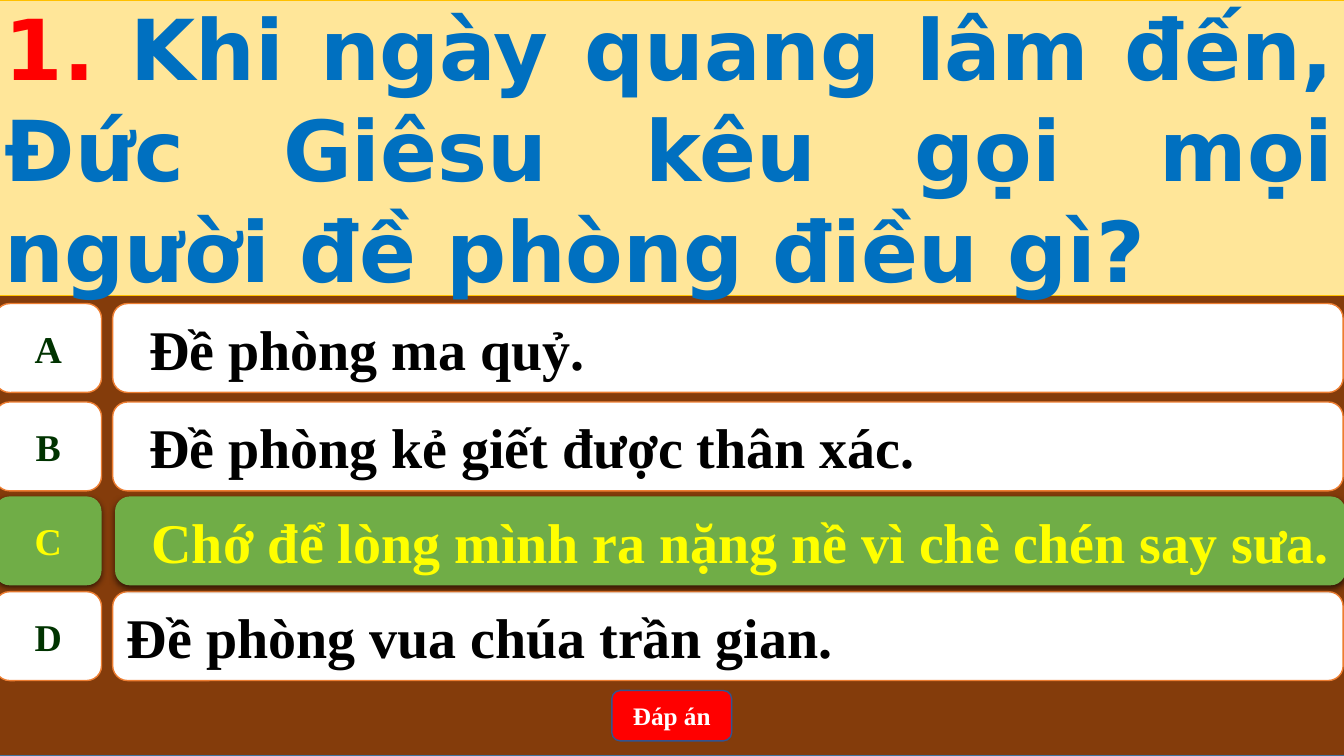
"""Builds a quiz slide with a question, four answers and an answer button."""
from dataclasses import dataclass
from typing import Optional

from lxml import etree
from pptx import Presentation
from pptx import util as u
from pptx.dml.color import RGBColor
from pptx.enum import shapes, text
from pptx.oxml import ns

BROWN = RGBColor(0x84, 0x3C, 0x0B)
STEEL = RGBColor(0x43, 0x73, 0x9E)
NAVY = RGBColor(0x32, 0x54, 0x91)
CREAM = RGBColor(0xFF, 0xE6, 0x99)
GOLD = RGBColor(0xFF, 0xC0, 0x00)
ORANGE = RGBColor(0xED, 0x7D, 0x31)
GREEN = RGBColor(0x70, 0xAD, 0x47)
DARK_GREEN = RGBColor(0x00, 0x33, 0x00)
BLUE = RGBColor(0x00, 0x70, 0xC0)
RED = RGBColor(0xFF, 0x00, 0x00)
YELLOW = RGBColor(0xFF, 0xFF, 0x00)
WHITE = RGBColor(0xFF, 0xFF, 0xFF)
BLACK = RGBColor(0x00, 0x00, 0x00)

SERIF = "Times New Roman"
SANS = "DejaVu Sans"
LEFT, FULL_WIDTH = -0.13, 34.01
ROW_HEIGHT = 2.24
RECTANGLE = shapes.MSO_SHAPE.RECTANGLE
ROUNDED = shapes.MSO_SHAPE.ROUNDED_RECTANGLE
LABEL_SHAPE = shapes.MSO_SHAPE.FLOWCHART_ALTERNATE_PROCESS
ALIGN = text.PP_ALIGN


@dataclass
class Box:
    kind: shapes.MSO_SHAPE
    left: float
    top: float
    width: float
    height: float
    fill: RGBColor
    line: Optional[RGBColor] = None
    line_width: float = 1


@dataclass
class Run:
    words: str
    size: float
    color: RGBColor
    font: str = SERIF


@dataclass
class Answer:
    letter: str
    words: str
    top: float
    indented: bool = True
    correct: bool = False


ANSWERS = [
    Answer("A", "Đề phòng ma quỷ.", 7.65),
    Answer("B", "Đề phòng kẻ giết được thân xác.", 10.13),
    Answer("D", "Đề phòng vua chúa trần gian.", 14.91, indented=False),
    Answer("C", "Chớ để lòng mình ra nặng nề vì chè chén say sưa.", 12.51, correct=True),
]


def add_box(slide, box: Box):
    """Draw a filled shape without a shadow."""
    shape = slide.shapes.add_shape(
        box.kind, u.Cm(box.left), u.Cm(box.top), u.Cm(box.width), u.Cm(box.height))
    shape.shadow.inherit = False
    shape.fill.solid()
    shape.fill.fore_color.rgb = box.fill
    if box.line is None:
        shape.line.fill.background()
    else:
        shape.line.color.rgb = box.line
        shape.line.width = u.Pt(box.line_width)
    return shape


def add_text(shape, runs: list[Run], align: text.PP_ALIGN, wrap: bool = True):
    """Write bold runs into the middle of a shape and return the paragraph."""
    frame = shape.text_frame
    frame.word_wrap = wrap
    frame.vertical_anchor = text.MSO_ANCHOR.MIDDLE
    paragraph = frame.paragraphs[0]
    paragraph.alignment = align
    for item in runs:
        run = paragraph.add_run()
        run.text = item.words
        run.font.name = item.font
        run.font.size = u.Pt(item.size)
        run.font.bold = True
        run.font.color.rgb = item.color
    return paragraph


def add_shadow(shape) -> None:
    """Give a shape a soft shadow below it."""
    effects = shape._element.spPr.find(ns.qn("a:effectLst"))
    shadow = etree.SubElement(
        effects, ns.qn("a:outerShdw"), blurRad=str(u.Pt(4.5)), dist=str(u.Pt(1.5)),
        dir="5400000", algn="ctr", rotWithShape="0")
    color = etree.SubElement(shadow, ns.qn("a:srgbClr"), val=str(BLACK))
    etree.SubElement(color, ns.qn("a:alpha"), val="63000")


def add_answer(slide, answer: Answer) -> None:
    """Draw one answer bar with its letter."""
    fill, line = (GREEN, None) if answer.correct else (WHITE, ORANGE)
    bar_left = 2.9 if answer.correct else 2.84
    bar = add_box(slide, Box(ROUNDED, bar_left, answer.top, 31.01, ROW_HEIGHT, fill, line))
    label = add_box(slide, Box(LABEL_SHAPE, LEFT, answer.top, 2.69, ROW_HEIGHT, fill, line))
    words = Run(answer.words, 40, YELLOW if answer.correct else BLACK)
    letter = Run(answer.letter, 27, YELLOW if answer.correct else DARK_GREEN)
    paragraph = add_text(bar, [words], ALIGN.LEFT)
    add_text(label, [letter], ALIGN.CENTER, wrap=False)
    if answer.indented:
        properties = paragraph._p.get_or_add_pPr()
        properties.set("marL", str(u.Cm(1.27)))
        properties.set("indent", str(u.Cm(-0.71)))
        paragraph.level = 1
    if answer.correct:
        add_shadow(bar)
        add_shadow(label)


def main() -> None:
    """Build and save the slide."""
    presentation = Presentation()
    presentation.slide_width, presentation.slide_height = u.Cm(33.87), u.Cm(19.05)
    slide = presentation.slides.add_slide(presentation.slide_layouts[6])
    add_box(slide, Box(RECTANGLE, LEFT, 0, FULL_WIDTH, 19.05, BROWN, STEEL))
    question = add_box(slide, Box(RECTANGLE, LEFT, 0, FULL_WIDTH, 7.44, CREAM, GOLD, 0.5))
    add_text(question, [
        Run("1. ", 60, RED, SANS),
        Run("Khi ngày quang lâm đến, Đức Giêsu kêu gọi mọi người đề phòng điều gì?",
            60, BLUE, SANS),
    ], ALIGN.JUSTIFY)
    for answer in ANSWERS:
        add_answer(slide, answer)
    button = add_box(slide, Box(ROUNDED, 15.42, 17.4, 3.02, 1.27, RED, NAVY))
    add_text(button, [Run("Đáp án", 18, WHITE)], ALIGN.CENTER)
    presentation.save("out.pptx")


if __name__ == "__main__":
    main()
